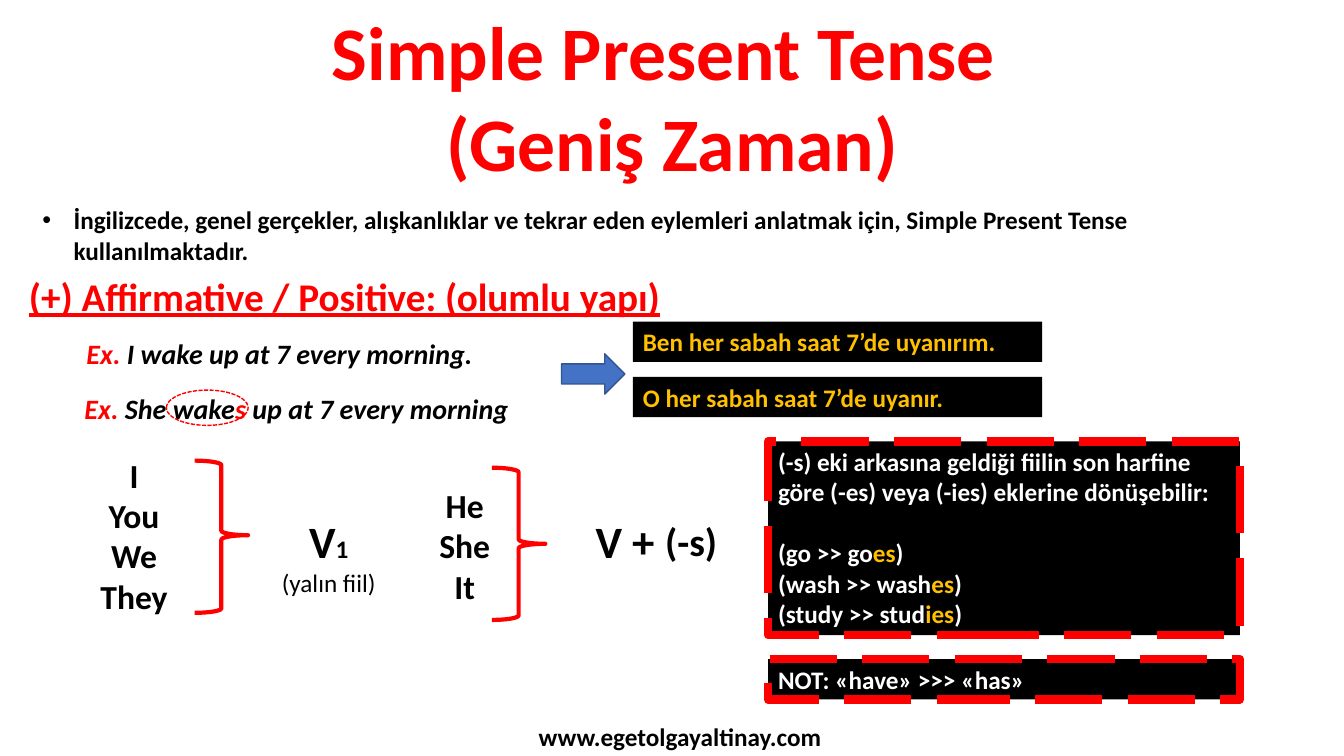
import pptx
import pptx.util
import pptx.dml.color
import pptx.enum.dml
import pptx.enum.shapes
import pptx.enum.text

RED = pptx.dml.color.RGBColor(0xFF, 0x00, 0x00)
BLACK = pptx.dml.color.RGBColor(0x00, 0x00, 0x00)
WHITE = pptx.dml.color.RGBColor(0xFF, 0xFF, 0xFF)
GOLD = pptx.dml.color.RGBColor(0xFF, 0xC0, 0x00)
BLUE = pptx.dml.color.RGBColor(0x44, 0x72, 0xC4)
NAVY = pptx.dml.color.RGBColor(0x32, 0x54, 0x91)

SHAPE = pptx.enum.shapes.MSO_SHAPE
DASH = pptx.enum.dml.MSO_LINE
CENTER = pptx.enum.text.PP_ALIGN.CENTER
LEFT = pptx.enum.text.PP_ALIGN.LEFT
BREAK = ("\v", {})

EX = ("Ex. ", {"color": RED})

TITLE = [[("Simple Present Tense ", {}), BREAK, ("(Geniş Zaman)", {})]]
USAGE = [[("İngilizcede, genel gerçekler, alışkanlıklar ve tekrar eden eylemleri "
           "anlatmak için, Simple Present Tense kullanılmaktadır.", {})]]
HEADING = [[("(+) Affirmative / Positive: (olumlu yapı)", {})]]
EXAMPLE_I = [[EX, ("I wake up at 7 every morning.", {})]]
EXAMPLE_SHE = [[EX, ("She wake", {}), ("s", {"color": RED}),
                (" up at 7 every morning", {})]]
TRANSLATIONS = ["Ben her sabah saat 7’de uyanırım.", "O her sabah saat 7’de uyanır."]
PLURAL_SUBJECTS = [[(word, {})] for word in ("I", "You", "We", "They")]
SINGULAR_SUBJECTS = [[(word, {})] for word in ("He", "She", "It")]
BARE_VERB = [[("V", {"size": 32}), ("1", {}), BREAK, ("(yalın fiil)", {"bold": False})]]
SPELLINGS = [("go >> go", "es"), ("wash >> wash", "es"), ("study >> stud", "ies")]
RULE = [[("(-s) eki arkasına geldiği fiilin son harfine göre (-es) veya (-ies) "
          "eklerine dönüşebilir:", {})]]
RULE += [[("(" + stem, {}), (ending, {"color": GOLD}), (")", {})]
         for stem, ending in SPELLINGS]
NOTE = [[("NOT: «have» >>> «has»", {})]]
SITE = [[("www.egetolgayaltinay.com", {})]]

# Areas are percentages of the slide: left, top, width, height.
TITLE_AREA = (23.7, 0, 52.65, 25.6)
USAGE_AREA = (2.4, 26.4, 87.9, 9.47)
TEXTS = [
    (HEADING, (1.42, 35.33, 54.8, 7.6), LEFT, {"size": 28, "color": RED, "underline": True}),
    (EXAMPLE_I, (5.7, 43.87, 35.5, 5.87), LEFT, {"size": 20, "italic": True}),
    (EXAMPLE_SHE, (5.55, 51.07, 37.2, 5.87), LEFT, {"size": 20, "italic": True}),
    (PLURAL_SUBJECTS, (5.55, 59.47, 8.85, 22.93), CENTER, {"size": 24}),
    (SINGULAR_SUBJECTS, (30.15, 63.47, 8.85, 17.47), CENTER, {"size": 24}),
    (BARE_VERB, (20.03, 67.33, 8.85, 12.53), CENTER, {}),
    ([[("V +", {})]], (40.58, 67.33, 11.85, 8.53), CENTER, {"size": 32}),
    ([[("(-s)", {})]], (48.75, 67.73, 7.35, 7.6), LEFT, {"size": 28}),
    (SITE, (34.43, 94.8, 32.33, 5.33), CENTER, {}),
]
BRACES = [((14.48, 60.93, 3.98, 20.13), 0.49), ((36.6, 61.87, 3.98, 20.13), 0.5)]
TRANSLATION_AREA = (47.1, 42.53, 30.45, 5.33)
TRANSLATION_PITCH = 7.33
PANELS = [(RULE, (57.15, 58.4, 35.1, 25.6)), (NOTE, (57.15, 87.2, 35.1, 5.33))]

deck = pptx.Presentation()
deck.slide_width = pptx.util.Inches(13.333)
deck.slide_height = pptx.util.Inches(7.5)
page = deck.slides.add_slide(deck.slide_layouts[1])


def place(area):
    sides = (deck.slide_width, deck.slide_height) * 2
    return [int(side * share / 100) for side, share in zip(sides, area)]


def write(box, paragraphs, align=LEFT, style=None, wrap=True):
    frame = box.text_frame
    frame.word_wrap = wrap
    frame.auto_size = pptx.enum.text.MSO_AUTO_SIZE.NONE
    frame.vertical_anchor = pptx.enum.text.MSO_ANCHOR.TOP
    for index, spans in enumerate(paragraphs):
        para = frame.add_paragraph() if index else frame.paragraphs[0]
        para.alignment = align
        para.space_before = pptx.util.Pt(0)
        for text, changes in spans:
            if text == "\v":
                para.add_line_break()
                continue
            span = para.add_run()
            span.text = text
            values = {"name": "Calibri", "size": 18, "bold": True, "color": BLACK}
            values.update(style or {})
            values.update(changes)
            span.font.color.rgb = values.pop("color")
            values["size"] = pptx.util.Pt(values["size"])
            for name, value in values.items():
                setattr(span.font, name, value)


def move(box, area):
    for name, value in zip(("left", "top", "width", "height"), place(area)):
        setattr(box, name, value)


def draw(kind, area, fill=None, line=None, weight=1, dash=None):
    shape = page.shapes.add_shape(kind, *place(area))
    shape.shadow.inherit = False
    if fill is None:
        shape.fill.background()
    else:
        shape.fill.solid()
        shape.fill.fore_color.rgb = fill
    if line is None:
        shape.line.fill.background()
    else:
        shape.line.color.rgb = line
        shape.line.width = pptx.util.Pt(weight)
        if dash is not None:
            shape.line.dash_style = dash
    return shape


title = page.shapes.title
move(title, TITLE_AREA)
write(title, TITLE, CENTER, {"size": 54, "color": RED}, wrap=False)

usage = page.placeholders[1]
move(usage, USAGE_AREA)
write(usage, USAGE)
bullet = usage.text_frame.paragraphs[0]._p.get_or_add_pPr()
for name, inches in {"marL": 0.31, "indent": -0.31}.items():
    bullet.set(name, str(int(pptx.util.Inches(inches))))

for paragraphs, area, align, style in TEXTS:
    write(page.shapes.add_textbox(*place(area)), paragraphs, align, style)

draw(SHAPE.RIGHT_ARROW, (41.78, 46.8, 4.72, 5.33), BLUE, NAVY)
draw(SHAPE.OVAL, (12.38, 51.6, 6.08, 4.67), line=RED, dash=DASH.SQUARE_DOT)

for area, point in BRACES:
    brace = draw(SHAPE.RIGHT_BRACE, area, line=RED, weight=3)
    brace.adjustments[0] = 0.083
    brace.adjustments[1] = point

left, top, width, height = TRANSLATION_AREA
for row, sentence in enumerate(TRANSLATIONS):
    area = (left, top + row * TRANSLATION_PITCH, width, height)
    write(draw(SHAPE.RECTANGLE, area, BLACK), [[(sentence, {})]], style={"color": GOLD})

for paragraphs, area in PANELS:
    panel = draw(SHAPE.RECTANGLE, area, BLACK, RED, 6, DASH.LONG_DASH)
    write(panel, paragraphs, style={"color": WHITE})
    for para in panel.text_frame.paragraphs[1:2]:
        para.space_before = pptx.util.Pt(22)

deck.save("out.pptx")
